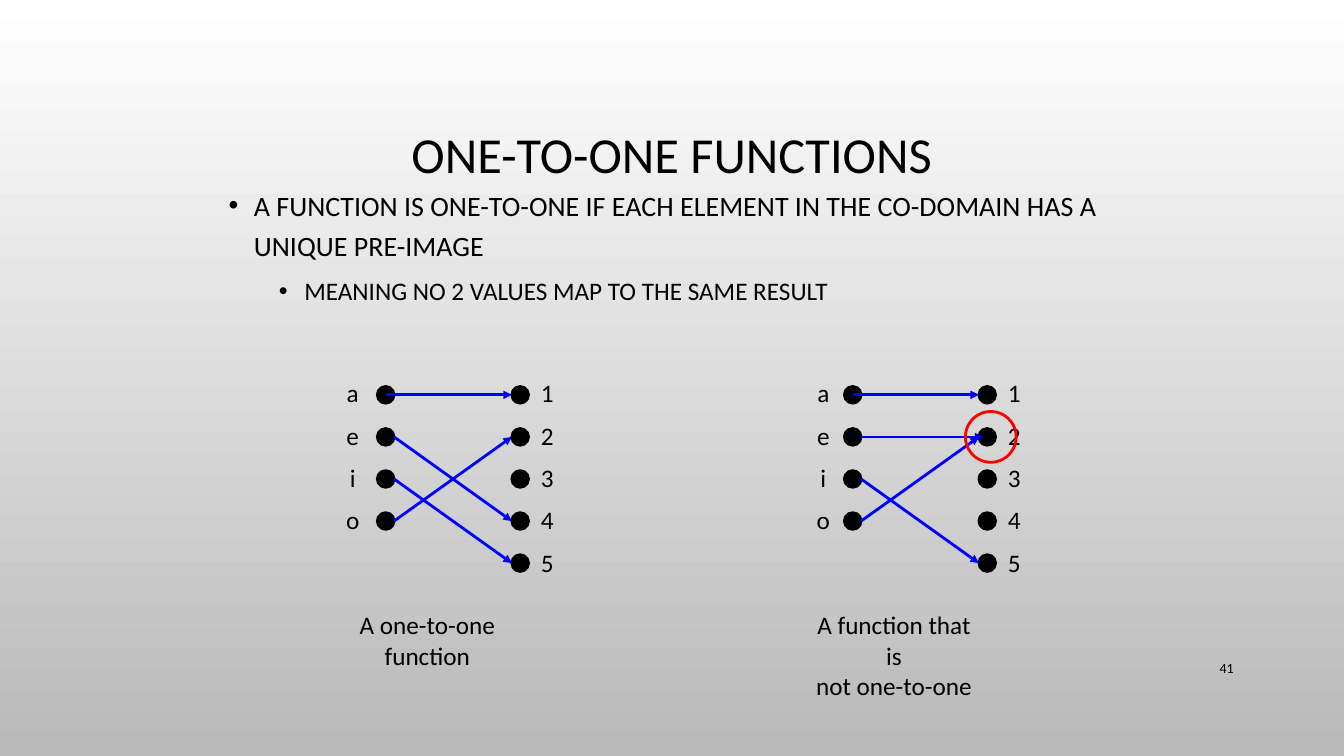
from lxml.etree import SubElement as Sub
from pptx import Presentation
from pptx.dml.color import RGBColor as Rgb
from pptx.enum.shapes import MSO_CONNECTOR as Conn, MSO_SHAPE as Geo
from pptx.enum.text import MSO_ANCHOR as Anchor, PP_ALIGN as Align
from pptx.oxml.ns import qn
from pptx.util import Cm, Pt

COLORS = {"ink": "000000", "arrow": "0000FF", "mark": "FF0000",
          "top": "FFFFFF", "base": "B9B9B9"}
FONT = "Calibri"
TOP, STEP = 9.95, 1.06    # first row of dots and row pitch
GAP, RADIUS = 3.39, 0.21  # distance between dot columns, dot radius


def color(name):
    return Rgb.from_string(COLORS[name])


class Board:
    def __init__(self, slide):
        self.slide = slide
        self.shapes = slide.shapes

    def fade(self):
        fill = self.slide.background.fill
        fill.gradient()
        fill.gradient_angle = 270
        for stop, name in zip(fill.gradient_stops, ("top", "base")):
            stop.color.rgb = color(name)

    def group(self):
        self.shapes = self.slide.shapes.add_group_shape().shapes

    def ungroup(self):
        self.shapes = self.slide.shapes

    def text(self, x, y, w, h, lines, size, align=Align.CENTER,
             space=None, anchor=Anchor.TOP, wrap=True):
        box = self.shapes.add_textbox(Cm(x), Cm(y), Cm(w), Cm(h))
        frame = box.text_frame
        frame.word_wrap = wrap
        frame.vertical_anchor = anchor
        for i, line in enumerate(lines):
            para = frame.paragraphs[0] if i == 0 else frame.add_paragraph()
            para.alignment = align
            para.line_spacing = space
            self.run(para, line, size)
        return frame

    def run(self, para, words, size):
        run = para.add_run()
        run.text = words
        font = run.font
        font.name, font.size = FONT, Pt(size)
        font.color.rgb = color("ink")

    def bullet(self, para, level, left):
        para.level = level
        props = para._p.get_or_add_pPr()
        props.set("marL", str(Cm(left)))
        props.set("indent", str(-Cm(0.64)))
        tint = Sub(props, qn("a:buClr"))
        Sub(tint, qn("a:srgbClr"), val=COLORS["ink"])
        Sub(props, qn("a:buFont"), typeface="Arial")
        Sub(props, qn("a:buChar"), char="•")

    def circle(self, x, y, radius, line, fill=None):
        dot = self.shapes.add_shape(Geo.OVAL, Cm(x - radius), Cm(y - radius),
                                    Cm(2 * radius), Cm(2 * radius))
        dot.shadow.inherit = False
        if fill:
            dot.fill.solid()
            dot.fill.fore_color.rgb = color(fill)
        else:
            dot.fill.background()
        dot.line.color.rgb = color(line)
        dot.line.width = Pt(2)

    def arrow(self, x1, y1, x2, y2):
        link = self.shapes.add_connector(Conn.STRAIGHT, Cm(x1), Cm(y1),
                                         Cm(x2), Cm(y2))
        link.line.color.rgb = color("arrow")
        link.line.width = Pt(2)
        Sub(link.line._get_or_add_ln(), qn("a:tailEnd"), type="triangle")
        Sub(link._element.spPr, qn("a:effectLst"))

    def mapping(self, x, label, pairs, title, middle):
        """Draw letters mapped to numbers; x is the left dot column."""
        self.group()
        for col, count in ((x, 4), (x + GAP, 5)):
            for row in range(count):
                self.circle(col, TOP + row * STEP, RADIUS, "ink", "ink")
        for start, end in pairs:
            first = x if start == 0 else x + RADIUS
            last = x + GAP - (0.1 if start == end == 1 else RADIUS)
            self.arrow(first, TOP + start * STEP, last, TOP + end * STEP)
        for left, names in ((label, "aeio"), (x + GAP + 0.25, "12345")):
            self.text(left, 9.09, 0.86, 5.59, names, 18, space=1.4, wrap=False)
        self.text(middle - 2.24, 15.24, 4.48, 1.8, title, 18)
        self.ungroup()


def main():
    deck = Presentation()
    deck.slide_width, deck.slide_height = Cm(33.87), Cm(19.05)
    board = Board(deck.slides.add_slide(deck.slide_layouts[6]))
    board.fade()

    # Page number and title
    board.text(29.21, 16.33, 2.13, 1.02, ["41"], 10, Align.RIGHT,
               anchor=Anchor.MIDDLE)
    board.text(2.54, 1.73, 28.78, 4.45, ["ONE-TO-ONE FUNCTIONS"], 36,
               space=0.9, anchor=Anchor.MIDDLE)

    # The two mappings
    board.mapping(9.72, 8.46, [(0, 0), (1, 3), (3, 1), (2, 4)],
                  ["A one-to-one function"], 10.77)
    board.mapping(21.49, 20.32, [(0, 0), (1, 1), (3, 1), (2, 4)],
                  ["A function that is", "not one-to-one"], 22.53)

    # Definition
    body = board.text(5.51, 4.45, 22.86, 12.57, [
        "A FUNCTION IS ONE-TO-ONE IF EACH ELEMENT IN THE CO-DOMAIN "
        "HAS A UNIQUE PRE-IMAGE"], 20, Align.LEFT, 1.2)
    board.bullet(body.paragraphs[0], 0, 0.64)
    note = body.add_paragraph()
    note.line_spacing, note.space_before = 1.2, Pt(5)
    board.bullet(note, 1, 1.91)
    board.run(note, "MEANING NO 2 VALUES MAP TO THE SAME RESULT", 18)

    # Ring around the shared result
    board.circle(24.97, TOP + STEP, 0.64, "mark")
    deck.save("out.pptx")


if __name__ == "__main__":
    main()
